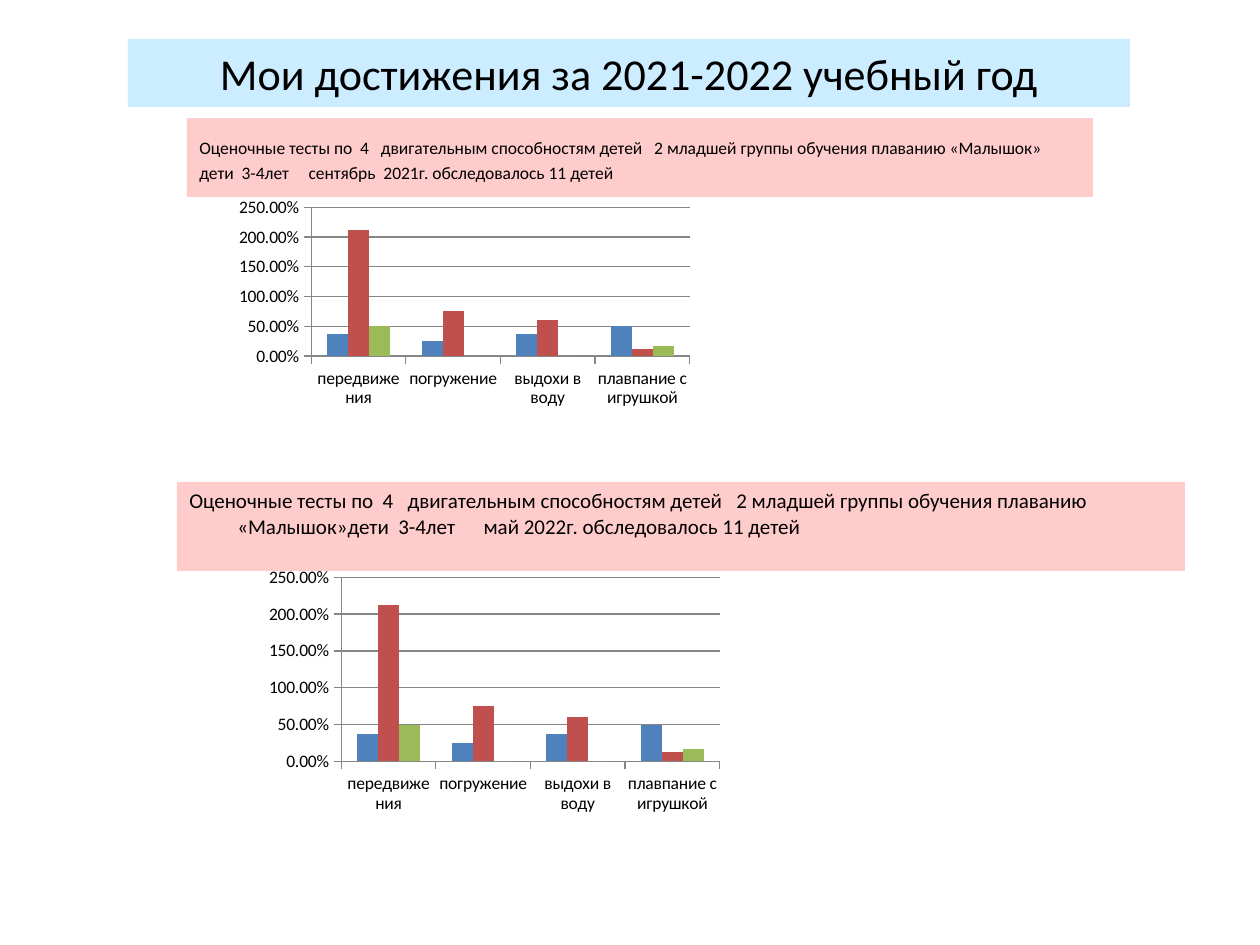
from lxml import etree
from pptx import Presentation
from pptx.chart.data import CategoryChartData
from pptx.dml.color import RGBColor
from pptx.enum.chart import XL_CHART_TYPE, XL_TICK_MARK
from pptx.enum.shapes import MSO_SHAPE
from pptx.enum.text import MSO_ANCHOR, PP_ALIGN
from pptx.oxml.ns import qn
from pptx.util import Pt

EMU_PER_PX = 914400 / 126
FONT = "Calibri"
COLORS = {
    "text": "000000",
    "title_band": "CCECFF",
    "heading_band": "FFCCCC",
    "axis": "868686",
    "Series 1": "4F81BD",
    "Series 2": "C0504D",
    "Series 3": "9BBB59",
}
SKILLS = ["передвижения", "погружение", "выдохи в воду", "плавпание с игрушкой"]
RESULTS = {
    "Series 1": [0.37, 0.25, 0.37, 0.5],
    "Series 2": [2.12, 0.75, 0.6, 0.12],
    "Series 3": [0.5, 0, 0, 0.17],
}
PLOT_LAYOUT = {
    "layoutTarget": "inner", "xMode": "edge", "yMode": "edge",
    "x": 0.12, "y": 0.05, "w": 0.515, "h": 0.6,
}


def px(length):
    """Turn pixels into EMU."""
    return round(length * EMU_PER_PX)


def color(name):
    """Return a named colour."""
    return RGBColor.from_string(COLORS[name])


def add_text(slide, box, lines, *, fill, size, align=PP_ALIGN.LEFT,
             anchor=MSO_ANCHOR.TOP, top_inset=6, hanging=0, space=0):
    """Add a filled band holding one paragraph per line."""
    shape = slide.shapes.add_shape(MSO_SHAPE.RECTANGLE, *map(px, box))
    shape.shadow.inherit = False
    shape.fill.solid()
    shape.fill.fore_color.rgb = color(fill)
    shape.line.fill.background()
    frame = shape.text_frame
    frame.word_wrap = True
    frame.vertical_anchor = anchor
    frame.margin_top = px(top_inset)
    for index, line in enumerate(lines):
        paragraph = frame.paragraphs[0] if index == 0 else frame.add_paragraph()
        paragraph.alignment = align
        if hanging:
            properties = paragraph._p.get_or_add_pPr()
            properties.set("marL", str(px(hanging)))
            properties.set("indent", str(-px(hanging)))
        if index:
            paragraph.space_before = Pt(space)
        run = paragraph.add_run()
        run.text = line
        run.font.name = FONT
        run.font.size = Pt(size)
        run.font.color.rgb = color("text")


def set_plot_layout(chart):
    """Fix the inner plot area as fractions of the chart."""
    plot_area = chart._chartSpace.chart.plotArea
    for old_layout in plot_area.findall(qn("c:layout")):
        plot_area.remove(old_layout)
    layout = etree.Element(qn("c:layout"))
    manual = etree.SubElement(layout, qn("c:manualLayout"))
    for name, value in PLOT_LAYOUT.items():
        etree.SubElement(manual, qn(f"c:{name}")).set("val", str(value))
    plot_area.insert(0, layout)


def add_results_chart(slide, box):
    """Add the clustered columns of test results."""
    data = CategoryChartData(number_format="0.00%")
    data.categories = SKILLS
    for name, values in RESULTS.items():
        data.add_series(name, values)
    chart = slide.shapes.add_chart(
        XL_CHART_TYPE.COLUMN_CLUSTERED, *map(px, box), data).chart
    chart.has_legend = False
    chart.has_title = False
    chart.font.name = FONT
    chart.font.size = Pt(10)
    chart.font.color.rgb = color("text")
    plot = chart.plots[0]
    plot.vary_by_categories = False
    plot.gap_width = 150
    plot.overlap = 0
    for series in plot.series:
        series.format.fill.solid()
        series.format.fill.fore_color.rgb = color(series.name)
    value_axis = chart.value_axis
    value_axis.minimum_scale = 0
    value_axis.maximum_scale = 2.5
    value_axis.major_unit = 0.5
    value_axis.has_major_gridlines = True
    value_axis.tick_labels.number_format = "0.00%"
    value_axis.tick_labels.number_format_is_linked = False
    for axis in (chart.category_axis, value_axis):
        axis.major_tick_mark = XL_TICK_MARK.OUTSIDE
        axis.format.line.color.rgb = color("axis")
    value_axis.major_gridlines.format.line.color.rgb = color("axis")
    set_plot_layout(chart)


def add_title(slide, box):
    """Add the title band."""
    add_text(slide, box, ["Мои достижения за 2021-2022 учебный год"],
             fill="title_band", size=25.2, align=PP_ALIGN.CENTER,
             anchor=MSO_ANCHOR.MIDDLE)


def add_assessment(slide, box, lines, *, size, top_inset, band_height, chart_offset):
    """Add a heading band and, under it, its chart reaching the box bottom."""
    left, top, width, height = box
    offset_x, offset_y = chart_offset
    add_text(slide, (left, top, width, band_height), lines, fill="heading_band",
             size=size, top_inset=top_inset, hanging=48, space=size / 5)
    add_results_chart(
        slide, (left + offset_x, top + offset_y, 735, height - offset_y))


def main():
    """Build and save the slide."""
    presentation = Presentation()
    presentation.slide_width = px(1260)
    presentation.slide_height = px(945)
    slide = presentation.slides.add_slide(presentation.slide_layouts[6])
    add_title(slide, (128, 39, 1002, 68))
    add_assessment(
        slide, (187, 118, 906, 325),
        ["Оценочные тесты по  4   двигательным способностям детей   "
         "2 младшей группы обучения плаванию «Малышок»",
         "дети  3-4лет     сентябрь  2021г. обследовалось 11 детей"],
        size=10, top_inset=19, band_height=79, chart_offset=(36, 77))
    add_assessment(
        slide, (177, 482, 1008, 387),
        ["Оценочные тесты по  4   двигательным способностям детей   "
         "2 младшей группы обучения плаванию «Малышок»"
         "дети  3-4лет      май 2022г. обследовалось 11 детей"],
        size=12, top_inset=6, band_height=89, chart_offset=(76, 80))
    presentation.save("out.pptx")


if __name__ == "__main__":
    main()
